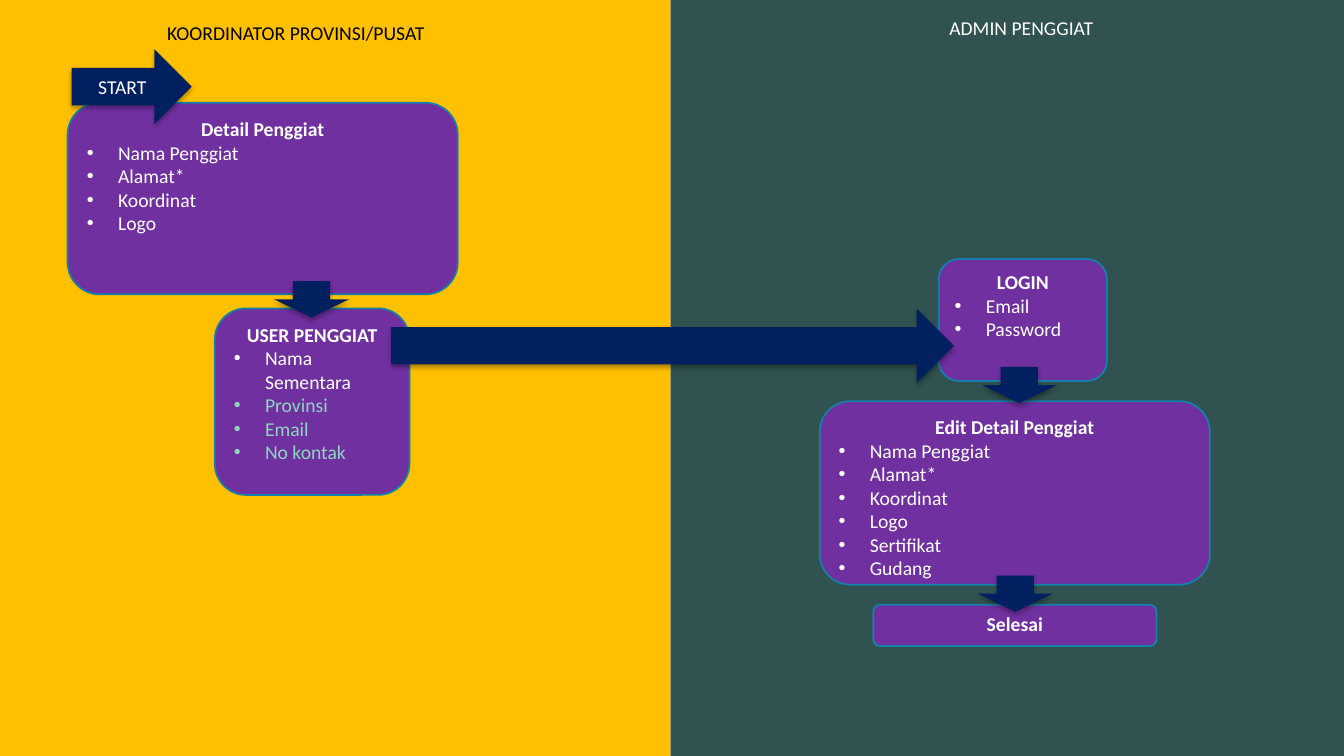
from lxml.etree import SubElement
from pptx import Presentation
from pptx.dml.color import RGBColor as Rgb
from pptx.enum.shapes import MSO_SHAPE as Kind
from pptx.enum.text import MSO_ANCHOR as Anchor, MSO_AUTO_SIZE as Auto, PP_ALIGN as Align
from pptx.oxml.ns import qn
from pptx.util import Emu, Inches, Pt

WIDE, HIGH = Inches(13.33), Inches(7.5)
GOLD, TEAL, PLUM, NAVY = "FFC000", "305250", "7030A0", "002060"
WHITE, BLACK, MINT, EDGE = "FFFFFF", "000000", "8DD6C1", "1580A9"
SPLIT = 49.89

BOXES = [
    ("Selesai", (64.97, 80, 21.08, 5.47), [], []),
    ("Detail Penggiat", (5.03, 13.6, 29.03, 25.33),
     ["Nama Penggiat", "Alamat*", "Koordinat", "Logo"], []),
    ("LOGIN", (69.84, 34.27, 12.53, 16.13), ["Email", "Password"], []),
    ("USER PENGGIAT", (15.98, 40.8, 14.48, 24.67),
     ["Nama Sementara"], ["Provinsi", "Email", "No kontak"]),
    ("Edit Detail Penggiat", (60.99, 53.07, 29.03, 24.27),
     ["Nama Penggiat", "Alamat*", "Koordinat", "Logo", "Sertifikat", "Gudang"], []),
]
DOWNS = [(21.83, 34.67), (74.49, 46), (74.19, 73.6)]


def tint(code):
    return Rgb.from_string(code)


def frame(area):
    left, top, width, height = area
    return [Emu(round(size * part / 100)) for size, part in
            ((WIDE, left), (HIGH, top), (WIDE, width), (HIGH, height))]


def style(para, color, bold=False, align=Align.CENTER):
    para.alignment = align
    para.space_before = Pt(0)
    for run in para.runs:
        font = run.font
        font.name, font.size, font.bold = "Calibri", Pt(14), bold
        font.color.rgb = tint(color)


def bullet(para):
    props = para._p.get_or_add_pPr()
    props.set("marL", str(Inches(0.31)))
    props.set("indent", str(-Inches(0.31)))
    SubElement(props, qn("a:buFont"), typeface="Arial")
    SubElement(props, qn("a:buChar"), char="•")


def solid(slide, kind, area, color):
    shape = slide.shapes.add_shape(kind, *frame(area))
    shape.fill.solid()
    shape.fill.fore_color.rgb = tint(color)
    shape.line.fill.background()
    shape.shadow.inherit = False
    return shape


def panel(slide, area, color):
    shape = solid(slide, Kind.RECTANGLE, area, color)
    slide.shapes._spTree.insert(2, shape._element)


def heading(holder, text, area, color):
    holder.left, holder.top, holder.width, holder.height = frame(area)
    body = holder.text_frame
    body.text = text
    body.word_wrap = False
    body.auto_size = Auto.NONE
    body.vertical_anchor = Anchor.TOP
    style(body.paragraphs[0], color)


def box(slide, title, area, plain, extra):
    shape = solid(slide, Kind.ROUNDED_RECTANGLE, area, PLUM)
    shape.line.color.rgb = tint(EDGE)
    shape.line.width = Pt(1.25)
    body = shape.text_frame
    body.vertical_anchor = Anchor.TOP
    body.text = "\n".join([title] + plain + extra)
    first, *rest = body.paragraphs
    style(first, WHITE, True)
    for para, color in zip(rest, [WHITE] * len(plain) + [MINT] * len(extra)):
        style(para, color, align=Align.LEFT)
        bullet(para)


def arrow(slide, area, text="", turn=0):
    shape = solid(slide, Kind.RIGHT_ARROW, area, NAVY)
    shape.rotation = turn
    glow = shape._element.spPr.find(qn("a:effectLst"))
    shade = SubElement(glow, qn("a:outerShdw"), blurRad=str(Pt(3.5)),
                       dist=str(Pt(2.2)), dir="5400000", rotWithShape="0")
    color = SubElement(shade, qn("a:srgbClr"), val=BLACK)
    SubElement(color, qn("a:alpha"), val="32000")
    if text:
        shape.text_frame.text = text
        style(shape.text_frame.paragraphs[0], WHITE)


def main():
    deck = Presentation()
    deck.slide_width, deck.slide_height = WIDE, HIGH
    slide = deck.slides.add_slide(deck.slide_layouts[4])
    title, left, lower, right, last = list(slide.placeholders)
    for spare in (title, lower, last):
        slide.shapes._spTree.remove(spare._element)
    panel(slide, (0, 0, SPLIT, 100), GOLD)
    panel(slide, (SPLIT, 0, 100 - SPLIT, 100), TEAL)
    heading(left, "KOORDINATOR PROVINSI/PUSAT", (11.63, 2.13, 20.78, 4.53), BLACK)
    heading(right, "ADMIN PENGGIAT", (69.84, 1.47, 12.3, 4.53), WHITE)
    for name, area, plain, extra in BOXES:
        box(slide, name, area, plain, extra)
    arrow(slide, (5.33, 6.53, 8.93, 9.87), "START")
    arrow(slide, (29.11, 40.8, 41.86, 9.87))
    for spot in DOWNS:
        arrow(slide, (*spot, 2.7, 9.87), turn=90)
    deck.save("out.pptx")


if __name__ == "__main__":
    main()
